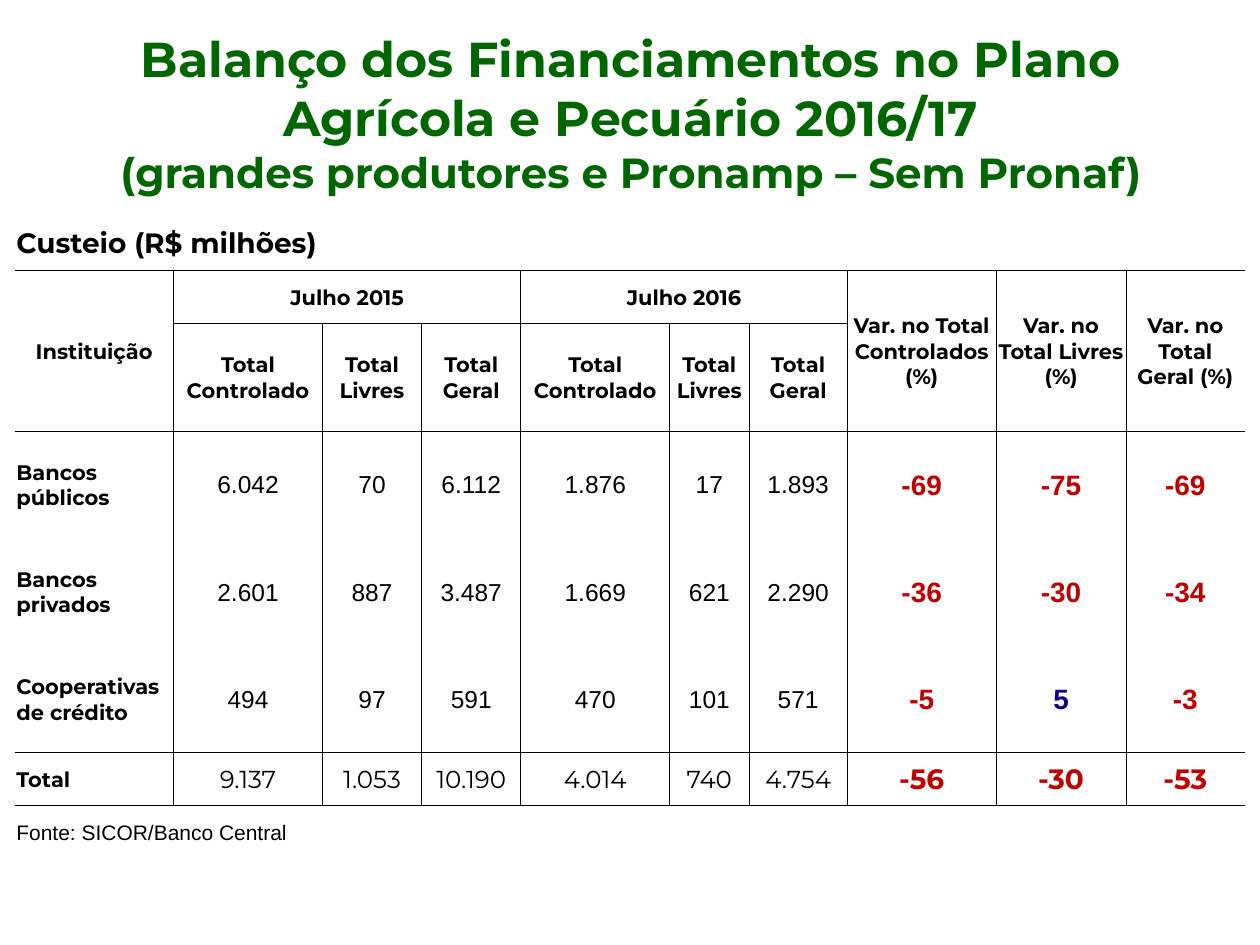
from lxml import etree
from pptx import Presentation
from pptx.dml.color import RGBColor
from pptx.enum.text import MSO_ANCHOR, PP_ALIGN
from pptx.oxml.ns import qn
from pptx.util import Cm, Pt

LEFT, CENTER = PP_ALIGN.LEFT, PP_ALIGN.CENTER
MIDDLE = MSO_ANCHOR.MIDDLE
HEADING_FONT, NUMBER_FONT = "Montserrat", "Arial"
BLACK, GREEN, RED, BLUE = "000000", "006600", "C00000", "110284"

# Content
TITLE = [
    ("Balanço dos Financiamentos no Plano Agrícola e Pecuário 2016/17", 28),
    ("(grandes produtores e Pronamp – Sem Pronaf)", 24),
]
CAPTION = "Custeio (R$ milhões)"
SOURCE = "Fonte: SICOR/Banco Central"
TOP_HEADERS = {
    0: "Instituição",
    1: "Julho 2015",
    4: "Julho 2016",
    9: "Var. no Total Controlados (%)",
    10: "Var. no Total Livres (%)",
    11: "Var. no Total Geral (%)",
}
SUBHEADERS = ["Total Controlado", "Total Livres", "Total Geral"] * 2
INSTITUTIONS = [
    ("Bancos públicos", ["6.042", "70", "6.112", "1.876", "17", "1.893"], ["-69", "-75", "-69"]),
    ("Bancos privados", ["2.601", "887", "3.487", "1.669", "621", "2.290"], ["-36", "-30", "-34"]),
    ("Cooperativas de crédito", ["494", "97", "591", "470", "101", "571"], ["-5", "5", "-3"]),
    ("Total", ["9.137", "1.053", "10.190", "4.014", "740", "4.754"], ["-56", "-30", "-53"]),
]

# Table grid
COLUMN_WIDTHS = [3.2, 3, 2, 2, 3, 0.36, 1.24, 0.38, 1.6, 3, 2.62, 2.39]
ROW_HEIGHTS = [1.14, 1.07, 2.16, 2.16, 2.16, 2.16, 1.07, 1.07]
AMOUNT_COLUMNS = [1, 2, 3, 4, 5, 7]
CHANGE_COLUMNS = [9, 10, 11]
FIRST_BODY_ROW, TOTAL_ROW, SOURCE_ROW = 3, 6, 7
MERGES = [(0, 0, 0, 3), (0, 4, 0, 5), (0, 6, 0, 7),
          (1, 0, 2, 0), (1, 1, 1, 3), (1, 4, 1, 8),
          (1, 9, 2, 9), (1, 10, 2, 10), (1, 11, 2, 11),
          (SOURCE_ROW, 0, SOURCE_ROW, 2)]
MERGES += [(row, column, row, column + 1)
           for row in range(2, SOURCE_ROW + 1) for column in (5, 7)]

# Rules, by the number of the row or column that follows them
FULL_RULES = {1: 0.5, FIRST_BODY_ROW: 0.5, TOTAL_ROW: 1, SOURCE_ROW: 0.5}


def horizontal_rule(edge, column):
    if edge == 2 and 1 <= column <= 8:
        return 0.5
    return FULL_RULES.get(edge, 0)


def vertical_rule(edge, row):
    if not 1 <= row <= TOTAL_ROW:
        return 0
    edges = TOP_HEADERS if row == 1 else AMOUNT_COLUMNS + CHANGE_COLUMNS
    return 0.5 if edge > 0 and edge in edges else 0


def color(value):
    return RGBColor.from_string(value)


def set_font(font, name, size, hex_color=BLACK, bold=True):
    font.name, font.size, font.bold = name, Pt(size), bold
    font.color.rgb = color(hex_color)


def add_border(cell, side, width):
    line = etree.SubElement(cell._tc.get_or_add_tcPr(), qn(f"a:ln{side}"))
    line.set("w", str(Pt(width)))
    if width:
        fill = etree.SubElement(line, qn("a:solidFill"))
        etree.SubElement(fill, qn("a:srgbClr")).set("val", BLACK)
    else:
        etree.SubElement(line, qn("a:noFill"))


def write(row, column, text, alignment=CENTER, name=HEADING_FONT, size=12, **style):
    cell = table.cell(row, column)
    cell.text = text
    paragraph = cell.text_frame.paragraphs[0]
    paragraph.alignment = alignment
    set_font(paragraph.font, name, size, **style)


presentation = Presentation()
presentation.slide_width, presentation.slide_height = Cm(25.4), Cm(19.05)
slide = presentation.slides.add_slide(presentation.slide_layouts[6])

# Table frame
table = slide.shapes.add_table(
    len(ROW_HEIGHTS), len(COLUMN_WIDTHS), Cm(0.3), Cm(4.32),
    Cm(sum(COLUMN_WIDTHS)), Cm(sum(ROW_HEIGHTS))).table
table.first_row = table.horz_banding = False
for column, width in zip(table.columns, COLUMN_WIDTHS):
    column.width = Cm(width)
for row, height in zip(table.rows, ROW_HEIGHTS):
    row.height = Cm(height)
for top, left, bottom, right in MERGES:
    table.cell(top, left).merge(table.cell(bottom, right))

# Cell borders, margins and fill
for row in range(len(ROW_HEIGHTS)):
    for column in range(len(COLUMN_WIDTHS)):
        cell = table.cell(row, column)
        add_border(cell, "L", vertical_rule(column, row))
        add_border(cell, "R", vertical_rule(column + 1, row))
        add_border(cell, "T", horizontal_rule(row, column))
        add_border(cell, "B", horizontal_rule(row + 1, column))
        cell.fill.background()
        cell.vertical_anchor = MIDDLE
        cell.margin_left = cell.margin_right = cell.margin_top = Cm(0.03)
        cell.margin_bottom = 0

# Caption, headers and source
write(0, 0, CAPTION, LEFT, size=16)
for column, text in TOP_HEADERS.items():
    write(1, column, text)
for column, text in zip(AMOUNT_COLUMNS, SUBHEADERS):
    write(2, column, text)
write(SOURCE_ROW, 0, SOURCE, LEFT, NUMBER_FONT, bold=False)

# Amounts and changes
for row, (institution, amounts, changes) in enumerate(INSTITUTIONS, FIRST_BODY_ROW):
    name = HEADING_FONT if row == TOTAL_ROW else NUMBER_FONT
    write(row, 0, institution, LEFT)
    for column, text in zip(AMOUNT_COLUMNS, amounts):
        write(row, column, text, name=name, size=14, bold=False)
    for column, text in zip(CHANGE_COLUMNS, changes):
        write(row, column, text, name=name, size=16,
              hex_color=RED if text.startswith("-") else BLUE)

# Title
title = slide.shapes.add_textbox(Cm(1.3), Cm(0.74), Cm(22.83), Cm(3.07))
title.text_frame.word_wrap = True
title.text_frame.vertical_anchor = MIDDLE
paragraph = title.text_frame.paragraphs[0]
paragraph.alignment = CENTER
for index, (text, size) in enumerate(TITLE):
    if index:
        paragraph.add_line_break()
    run = paragraph.add_run()
    run.text = text
    set_font(run.font, HEADING_FONT, size, GREEN)

presentation.save("out.pptx")
